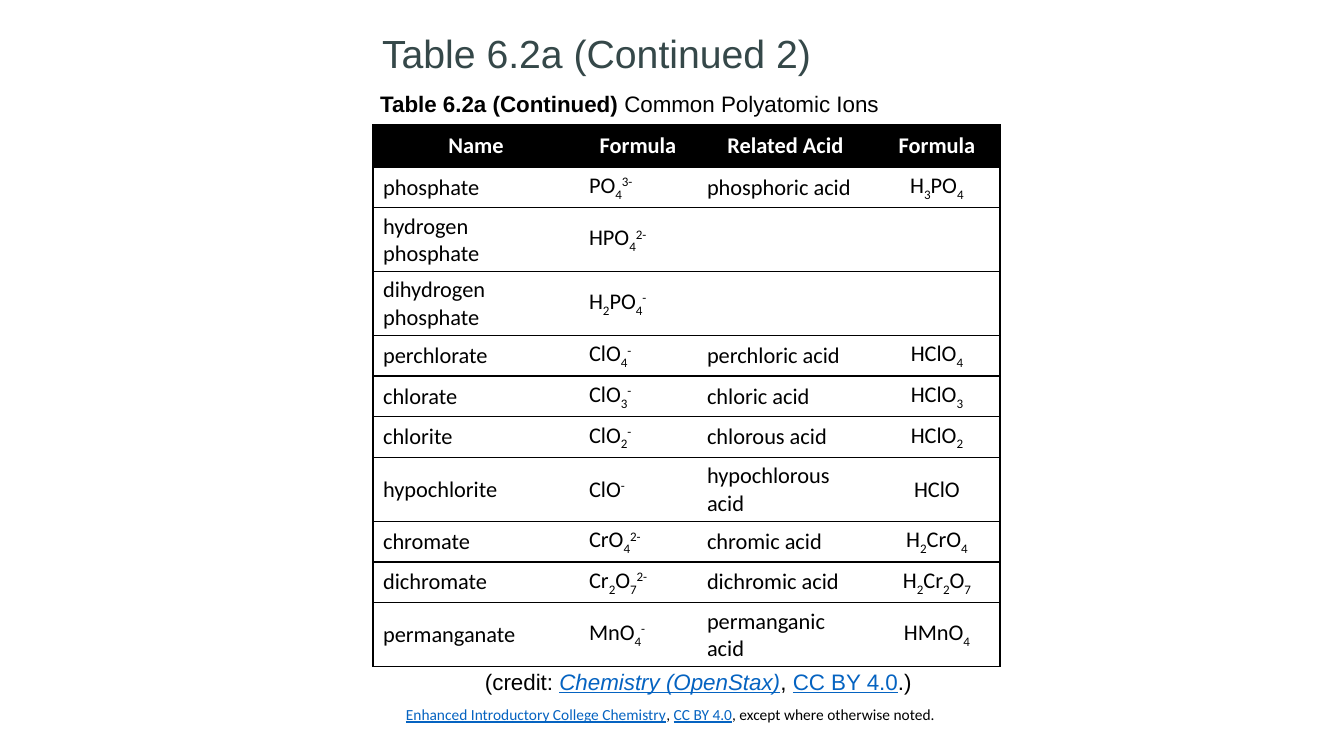
from itertools import groupby

from lxml.etree import SubElement
from pptx import Presentation
from pptx.dml.color import RGBColor
from pptx.enum.text import MSO_ANCHOR, PP_ALIGN
from pptx.oxml.ns import qn
from pptx.util import Emu, Pt

BLACK = RGBColor(0x00, 0x00, 0x00)
WHITE = RGBColor(0xFF, 0xFF, 0xFF)
SLATE = RGBColor(0x35, 0x48, 0x49)
LINK_BLUE = RGBColor(0x05, 0x63, 0xC1)
LINK = {"color": LINK_BLUE, "underline": True}

HEADINGS = ("Name", "Formula", "Related Acid", "Formula")
IONS = [
    ("phosphate", "PO4^3-", "phosphoric acid", "H3PO4"),
    ("hydrogen phosphate", "HPO4^2-", "", ""),
    ("dihydrogen phosphate", "H2PO4^-", "", ""),
    ("perchlorate", "ClO4^-", "perchloric acid", "HClO4"),
    ("chlorate", "ClO3^-", "chloric acid", "HClO3"),
    ("chlorite", "ClO2^-", "chlorous acid", "HClO2"),
    ("hypochlorite", "ClO^-", "hypochlorous acid", "HClO"),
    ("chromate", "CrO4^2-", "chromic acid", "H2CrO4"),
    ("dichromate", "Cr2O7^2-", "dichromic acid", "H2Cr2O7"),
    ("permanganate", "MnO4^-", "permanganic acid", "HMnO4"),
]
COLUMN_WIDTHS = (206, 118, 177, 126)
HEADER_HEIGHT, ROW_HEIGHT = 42, 37


def px(length):
    """Turn whole pixels into EMU."""
    return Emu(round(length * 914400 / 100.8))


def formula_runs(formula):
    """Split a formula into runs with lowered counts and a raised charge."""
    atoms, _, charge = formula.partition("^")
    runs = [("".join(part), {"baseline": -25 if is_count else 0})
            for is_count, part in groupby(atoms, str.isdigit)]
    return runs + [(charge, {"baseline": 30})] if charge else runs


class IonSlide:
    """Holds the style and the current slide."""

    heading_font = "Arial"
    table_font = "Calibri"
    text_size = 16

    def __init__(self, presentation):
        """Add a slide that has only a title."""
        self.slide = presentation.slides.add_slide(presentation.slide_layouts[5])

    def add_runs(self, paragraph, runs, font, size, color=BLACK):
        """Add styled runs to a paragraph."""
        for text, style in runs:
            run = paragraph.add_run()
            run.text = text
            run.font.name = font
            run.font.size = Pt(size)
            run.font.color.rgb = style.get("color", color)
            run.font.bold = style.get("bold", False)
            run.font.italic = style.get("italic", False)
            run.font.underline = style.get("underline", False)
            if style.get("baseline"):
                run.font._element.set("baseline", str(style["baseline"] * 1000))

    def title(self, text, left, top, width, height):
        """Place and fill the title placeholder."""
        title = self.slide.shapes.title
        title.left, title.top = px(left), px(top)
        title.width, title.height = px(width), px(height)
        title.text_frame.vertical_anchor = MSO_ANCHOR.BOTTOM
        paragraph = title.text_frame.paragraphs[0]
        paragraph.alignment = PP_ALIGN.LEFT
        paragraph.line_spacing = 0.9
        self.add_runs(paragraph, [(text, {})], self.heading_font, 28, SLATE)

    def text(self, runs, left, top, width, height, font=heading_font,
             size=text_size, align=PP_ALIGN.LEFT, wrap=True):
        """Add a one-paragraph text box."""
        box = self.slide.shapes.add_textbox(px(left), px(top), px(width), px(height))
        box.text_frame.word_wrap = wrap
        paragraph = box.text_frame.paragraphs[0]
        paragraph.alignment = align
        self.add_runs(paragraph, runs, font, size)

    def border(self, cell, is_first, is_last):
        """Rule a cell above and below, and at the table's outer sides."""
        properties = cell._tc.get_or_add_tcPr()
        for side, shown in (("L", is_first), ("R", is_last), ("T", True), ("B", True)):
            line = SubElement(properties, qn(f"a:ln{side}"), w=str(Pt(1)))
            if shown:
                fill = SubElement(line, qn("a:solidFill"))
                SubElement(fill, qn("a:srgbClr"), val=str(BLACK))
            else:
                SubElement(line, qn("a:noFill"))

    def cell(self, cell, runs, centred, fill, color):
        """Fill one table cell and set its text."""
        cell.fill.solid()
        cell.fill.fore_color.rgb = fill
        cell.vertical_anchor = MSO_ANCHOR.MIDDLE
        paragraph = cell.text_frame.paragraphs[0]
        if centred:
            cell.margin_left = cell.margin_right = 0
            cell.margin_top = cell.margin_bottom = 0
            paragraph.alignment = PP_ALIGN.CENTER
        self.add_runs(paragraph, runs, self.table_font, self.text_size, color)

    def table(self, headings, rows, left, top):
        """Add the ruled table of ions and acids."""
        height = HEADER_HEIGHT + ROW_HEIGHT * len(rows)
        table = self.slide.shapes.add_table(
            len(rows) + 1, len(headings), px(left), px(top),
            px(sum(COLUMN_WIDTHS)), px(height)).table
        table.horz_banding = False
        for column, width in zip(table.columns, COLUMN_WIDTHS):
            column.width = px(width)
        last = len(headings) - 1
        for r, values in enumerate([headings, *rows]):
            is_header = r == 0
            table.rows[r].height = px(HEADER_HEIGHT if is_header else ROW_HEIGHT)
            for c, value in enumerate(values):
                cell = table.cell(r, c)
                self.border(cell, c == 0, c == last)
                if is_header:
                    self.cell(cell, [(value, {"bold": True})], True, BLACK, WHITE)
                else:
                    runs = formula_runs(value) if c % 2 else [(value, {})]
                    self.cell(cell, runs if value else [], c == last, WHITE, BLACK)


def main():
    """Build and save the slide."""
    presentation = Presentation()
    presentation.slide_width, presentation.slide_height = px(1344), px(756)
    page = IonSlide(presentation)
    page.text([("Enhanced Introductory College Chemistry", LINK), (", ", {}),
               ("CC BY 4.0", LINK), (", except where otherwise noted.", {})],
              396, 700, 713, 40, font=IonSlide.table_font, size=11)
    page.title("Table 6.2a (Continued 2)", 372, 11, 546, 71)
    page.text([("Table 6.2a (Continued) ", {"bold": True}),
               ("Common Polyatomic Ions", {})],
              245, 85, 769, 37, align=PP_ALIGN.CENTER)
    page.table(HEADINGS, IONS, 373, 125)
    page.text([("(credit: ", {}), ("Chemistry (OpenStax)", {**LINK, "italic": True}),
               (", ", {}), ("CC BY 4.0", LINK), (".)", {})],
              475, 663, 453, 37, wrap=False)
    presentation.save("out.pptx")


if __name__ == "__main__":
    main()
